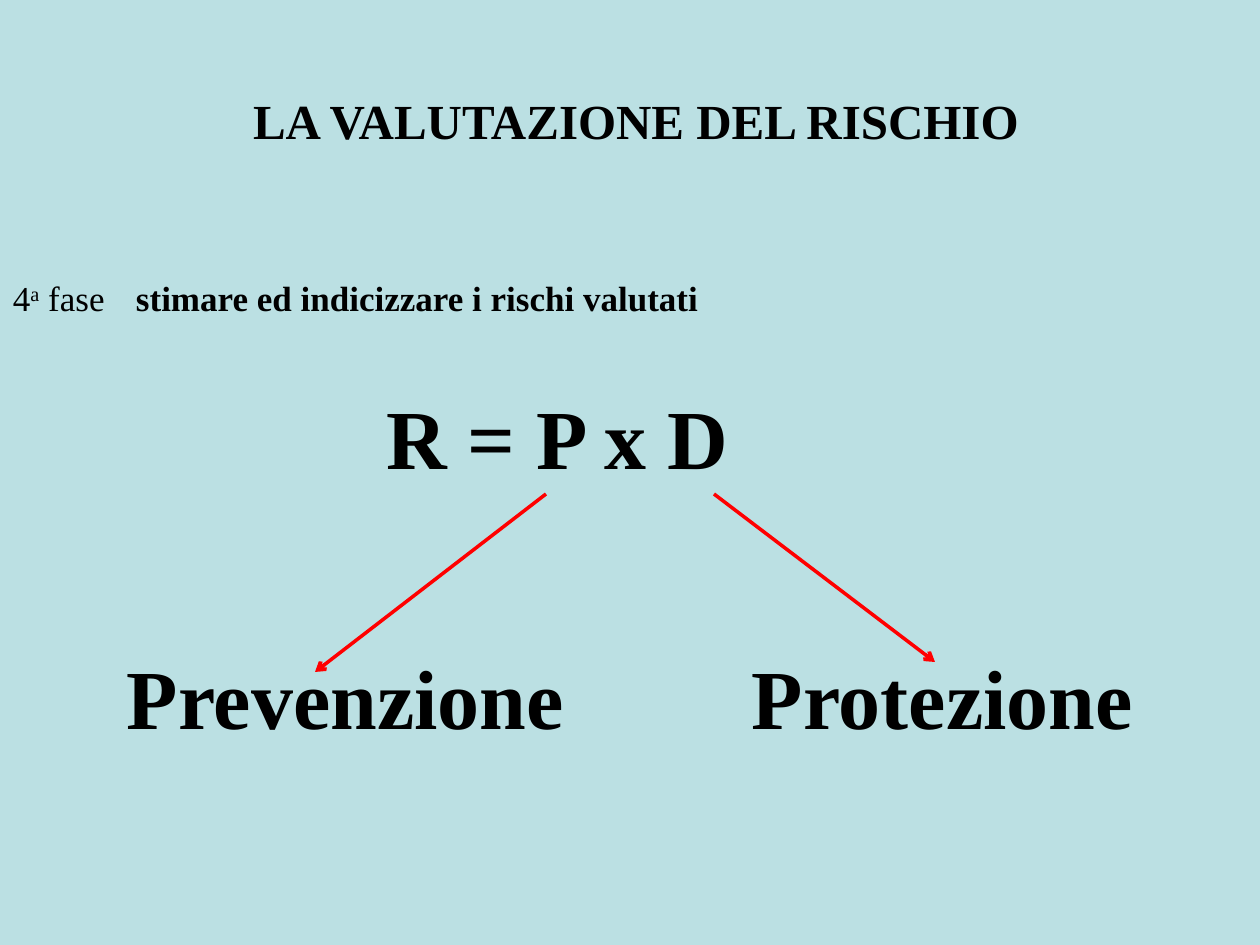
from dataclasses import dataclass
from typing import Optional

from lxml.etree import SubElement
from pptx import Presentation
from pptx.dml.color import RGBColor
from pptx.enum.shapes import MSO_CONNECTOR
from pptx.enum.text import MSO_ANCHOR, MSO_AUTO_SIZE, PP_ALIGN
from pptx.oxml.ns import qn
from pptx.util import Emu, Pt

PX_PER_INCH = 126
FONT = "Times New Roman"
COLORS = {"background": "BBE0E3", "text": "000000", "arrow": "FF0000", "shadow": "808080"}


@dataclass(frozen=True)
class Span:
    text: str
    bold: Optional[bool] = None
    baseline: int = 0


@dataclass(frozen=True)
class Label:
    left: int
    top: int
    width: int
    height: int
    size: int
    spans: tuple[Span, ...]
    bold: bool = True
    align: PP_ALIGN = PP_ALIGN.CENTER
    anchor: MSO_ANCHOR = MSO_ANCHOR.TOP
    spacing: float = 1.0
    inset: int = 13
    hanging: int = 0
    tab: int = 0
    shadow: bool = False


@dataclass(frozen=True)
class Arrow:
    start: tuple[int, int]
    end: tuple[int, int]


LABELS = (
    Label(0, 262, 1260, 60, 20,
          (Span("4"), Span("a", baseline=30000), Span(" fase\t"),
           Span("stimare ed indicizzare i rischi valutati", bold=True)),
          bold=False, align=PP_ALIGN.LEFT, spacing=1.2, hanging=123),
    Label(84, 84, 1103, 72, 28, (Span("LA VALUTAZIONE DEL RISCHIO"),),
          anchor=MSO_ANCHOR.MIDDLE, shadow=True),
    Label(-31, 399, 1197, 97, 48, (Span("R = P x D "),), spacing=0.8),
    Label(31, 659, 1197, 97, 48, (Span("Prevenzione\tProtezione"),),
          align=PP_ALIGN.LEFT, spacing=0.8, inset=96, tab=625),
)
ARROWS = (Arrow((546, 494), (315, 672)), Arrow((714, 494), (935, 662)))


def px(length: int) -> Emu:
    """Turn pixels into EMU."""
    return Emu(round(length * 914400 / PX_PER_INCH))


def color(name: str) -> RGBColor:
    """Look up a named colour."""
    return RGBColor.from_string(COLORS[name])


def add_text_shadow(properties) -> None:
    """Give a run a grey shadow to the lower right."""
    effects = SubElement(properties, qn("a:effectLst"))
    shadow = SubElement(effects, qn("a:outerShdw"), dist="35921", dir="2700000")
    SubElement(shadow, qn("a:srgbClr"), val=COLORS["shadow"])


def add_label(page, label: Label) -> None:
    """Draw one paragraph of text in its own box."""
    box = page.shapes.add_textbox(*map(px, (label.left, label.top, label.width, label.height)))
    frame = box.text_frame
    frame.word_wrap = True
    frame.auto_size = MSO_AUTO_SIZE.SHAPE_TO_FIT_TEXT
    frame.vertical_anchor = label.anchor
    frame.margin_left = px(label.inset)
    para = frame.paragraphs[0]
    para.alignment = label.align
    para.line_spacing = label.spacing
    settings = para._p.get_or_add_pPr()
    if label.hanging:
        settings.set("marL", str(px(label.hanging)))
        settings.set("indent", str(-px(label.hanging)))
    if label.tab:
        tabs = SubElement(settings, qn("a:tabLst"))
        SubElement(tabs, qn("a:tab"), pos=str(px(label.tab)), algn="l")
    para.font.name = FONT
    para.font.size = Pt(label.size)
    para.font.bold = label.bold
    para.font.color.rgb = color("text")
    for span in label.spans:
        run = para.add_run()
        run.text = span.text
        if span.bold is not None:
            run.font.bold = span.bold
        properties = run._r.get_or_add_rPr()
        if span.baseline:
            properties.set("baseline", str(span.baseline))
        if label.shadow:
            add_text_shadow(properties)


def add_arrow(page, arrow: Arrow) -> None:
    """Draw a straight line with an open arrowhead at its end."""
    connector = page.shapes.add_connector(
        MSO_CONNECTOR.STRAIGHT, *map(px, arrow.start + arrow.end))
    connector.line.color.rgb = color("arrow")
    connector.line.width = Pt(2)
    SubElement(connector.line._get_or_add_ln(), qn("a:tailEnd"), type="arrow")
    SubElement(connector._element.spPr, qn("a:effectLst"))


def main() -> None:
    """Build the risk assessment slide and save it."""
    deck = Presentation()
    deck.slide_width, deck.slide_height = px(1260), px(945)
    page = deck.slides.add_slide(deck.slide_layouts[6])
    fill = page.background.fill
    fill.solid()
    fill.fore_color.rgb = color("background")
    for label in LABELS:
        add_label(page, label)
    for arrow in ARROWS:
        add_arrow(page, arrow)
    deck.save("out.pptx")


if __name__ == "__main__":
    main()
